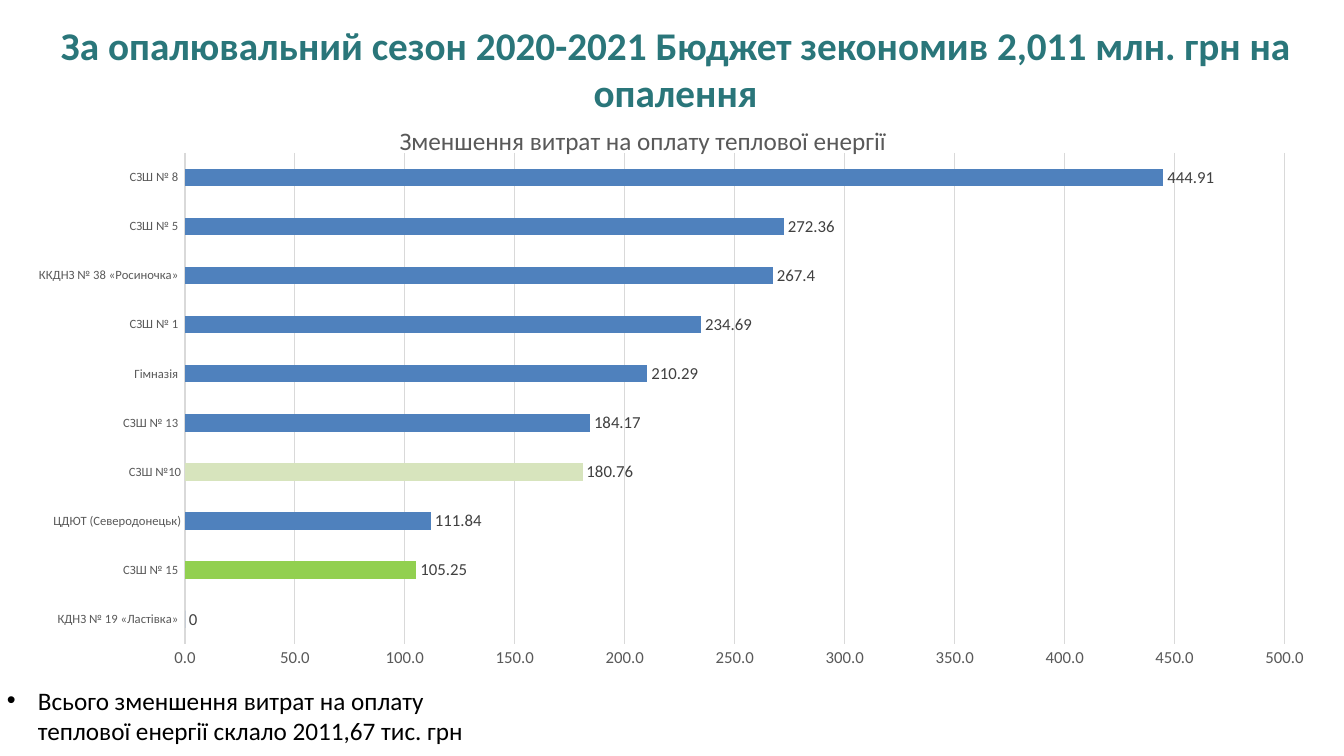
from lxml import etree
from pptx import Presentation
from pptx.chart.data import CategoryChartData
from pptx.dml.color import RGBColor
from pptx.enum.chart import XL_CHART_TYPE, XL_LABEL_POSITION, XL_TICK_MARK
from pptx.enum.text import MSO_ANCHOR, PP_ALIGN
from pptx.oxml.ns import qn
from pptx.util import Pt

BAR = XL_CHART_TYPE.BAR_CLUSTERED
OUT_END = XL_LABEL_POSITION.OUTSIDE_END
NO_TICK = XL_TICK_MARK.NONE
MIDDLE = MSO_ANCHOR.MIDDLE
CENTER = PP_ALIGN.CENTER

PX = 914400 / 100.8
COLORS = {
    "teal": "2A767A", "black": "000000", "gray": "595959", "dark": "404040",
    "grid": "D9D9D9", "blue": "4F81BD", "lime": "92D050", "pale": "D7E4BD",
}
SAVINGS = [
    ("КДНЗ № 19 «Ластівка» ", 0),
    ("СЗШ № 15 ", 105.25),
    ("ЦДЮТ (Северодонецьк)", 111.84),
    ("СЗШ №10", 180.76),
    ("СЗШ № 13 ", 184.17),
    ("Гімназія ", 210.29),
    ("СЗШ № 1 ", 234.69),
    ("ККДНЗ № 38 «Росиночка» ", 267.4),
    ("СЗШ № 5 ", 272.36),
    ("СЗШ № 8 ", 444.91),
]
MARKED = {1: "lime", 3: "pale"}


def px(n):
    return round(n * PX)


def color(name):
    return RGBColor.from_string(COLORS[name])


class Deck:
    face = "Calibri"

    def __init__(self, width, height):
        self.prs = Presentation()
        self.prs.slide_width, self.prs.slide_height = px(width), px(height)
        self.slide = self.prs.slides.add_slide(self.prs.slide_layouts[5])

    def style(self, font, size, tint, bold=False):
        font.name, font.size, font.bold = self.face, Pt(size), bold
        font.color.rgb = color(tint)

    def fill(self, item, tint):
        item.format.fill.solid()
        item.format.fill.fore_color.rgb = color(tint)

    def title(self, text, left, top, width, height):
        box = self.slide.shapes.title
        box.left, box.top, box.width, box.height = map(px, (left, top, width, height))
        frame = box.text_frame
        frame.text, frame.vertical_anchor, frame.word_wrap = text, MIDDLE, True
        para = frame.paragraphs[0]
        para.alignment = CENTER
        self.style(para.font, 28, "teal", True)

    def bullet(self, text, left, top, width, height):
        box = self.slide.shapes.add_textbox(*map(px, (left, top, width, height)))
        frame = box.text_frame
        frame.word_wrap, frame.text = True, text
        para = frame.paragraphs[0]
        self.style(para.font, 18, "black")
        props = para._p.get_or_add_pPr()
        props.set("marL", str(px(31)))
        props.set("indent", str(px(-31)))
        etree.SubElement(props, qn("a:buFont")).set("typeface", "Arial")
        etree.SubElement(props, qn("a:buChar")).set("char", "•")

    def place(self, parent, index, **parts):
        """Set a manual layout, as fractions of the chart."""
        for old in parent.findall(qn("c:layout")):
            parent.remove(old)
        layout = etree.Element(qn("c:layout"))
        manual = etree.SubElement(layout, qn("c:manualLayout"))
        for tag, value in parts.items():
            etree.SubElement(manual, qn("c:" + tag)).set("val", str(value))
        parent.insert(index, layout)

    def bars(self, heading, rows, marked, left, top, width, height):
        data = CategoryChartData()
        data.categories = [name for name, _ in rows]
        data.add_series("Зменшення витрат", [value for _, value in rows])
        chart = self.slide.shapes.add_chart(
            BAR, *map(px, (left, top, width, height)), data).chart
        self.style(chart.font, 10, "black")
        chart.has_legend = False

        # Heading
        frame = chart.chart_title.text_frame
        frame.text = heading
        self.style(frame.paragraphs[0].font, 18, "gray")
        self.place(chart.chart_title._element, 1, xMode="edge", yMode="edge",
                   x=0.29, y=0.06)
        self.place(chart._chartSpace.chart.plotArea, 0, layoutTarget="inner",
                   xMode="edge", yMode="edge", x=0.1306, y=0.117, w=0.835, h=0.821)

        # Axes
        names, scale = chart.category_axis, chart.value_axis
        for axis, size in ((names, 9), (scale, 12)):
            axis.major_tick_mark = axis.minor_tick_mark = NO_TICK
            self.style(axis.tick_labels.font, size, "gray")
        scale.minimum_scale, scale.maximum_scale, scale.major_unit = 0, 500, 50
        scale.tick_labels.number_format = "#,##0.0"
        scale.tick_labels.number_format_is_linked = False
        scale.format.line.fill.background()
        for line in (names.format.line, scale.major_gridlines.format.line):
            line.color.rgb, line.width = color("grid"), Pt(0.75)

        # Bars and values
        plot = chart.plots[0]
        plot.gap_width, plot.vary_by_categories = 182, False
        series = plot.series[0]
        self.fill(series, "blue")
        for index, tint in marked.items():
            self.fill(series.points[index], tint)
        labels = series.data_labels
        labels.show_value, labels.position = True, OUT_END
        self.style(labels.font, 12, "dark")


def main():
    deck = Deck(1344, 756)
    deck.title("За опалювальний сезон 2020-2021 Бюджет зекономив 2,011 млн. грн на опалення",
               13, 32, 1325, 72)
    deck.bullet("Всього зменшення витрат на оплату теплової енергії склало 2011,67 тис. грн",
                -3, 680, 500, 102)
    deck.bars("Зменшення витрат на оплату теплової енергії", SAVINGS, MARKED,
              13, 83, 1317, 598)
    deck.prs.save("out.pptx")


if __name__ == "__main__":
    main()
